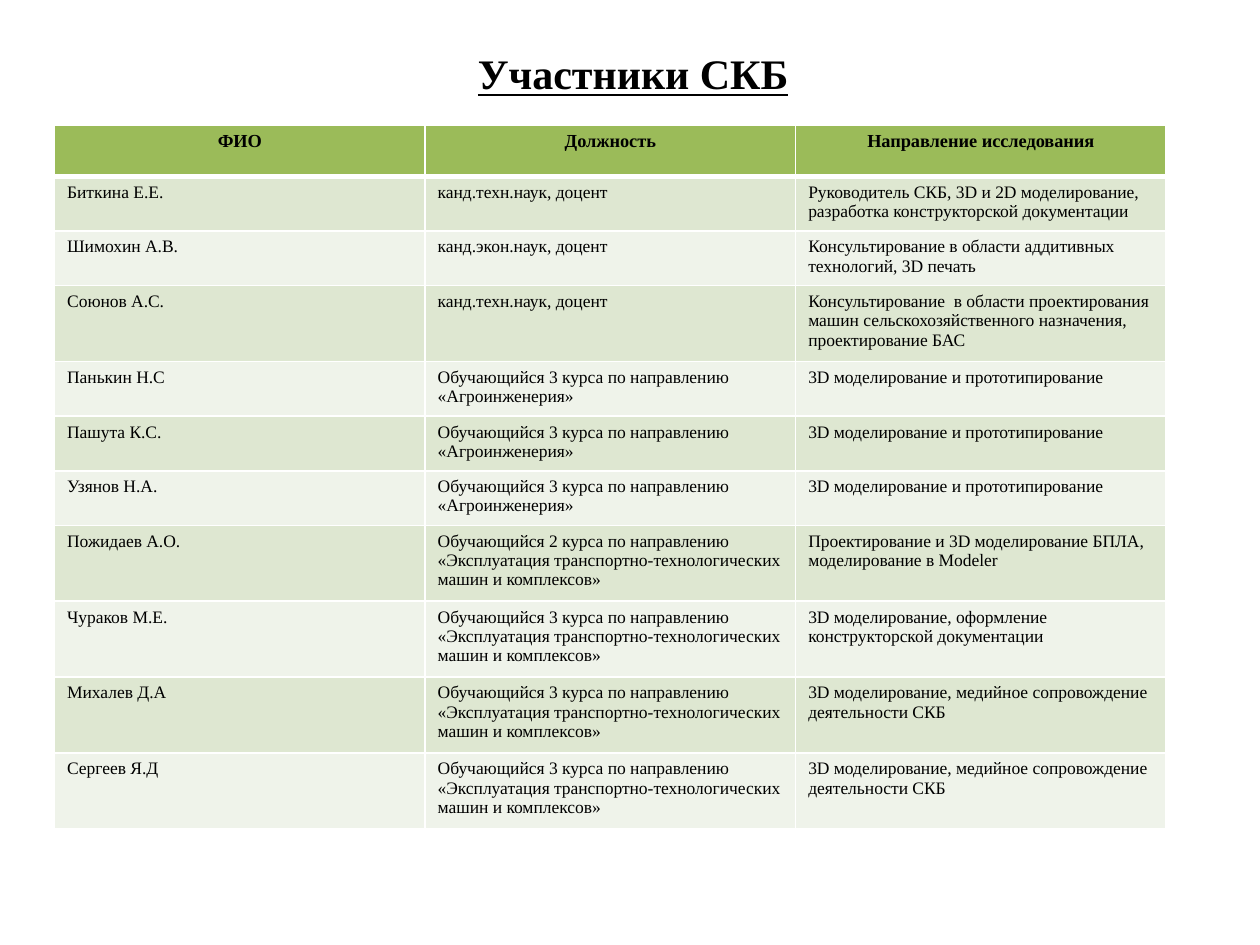
from lxml import etree
from pptx import Presentation
from pptx.dml.color import RGBColor
from pptx.enum.text import MSO_ANCHOR, PP_ALIGN
from pptx.oxml.ns import qn
from pptx.util import Cm, Pt

CENTER, LEFT = PP_ALIGN.CENTER, PP_ALIGN.LEFT
MIDDLE = MSO_ANCHOR.MIDDLE
FONT = "Times New Roman"
HEADER_FILL, BAND_FILLS = "9BBB59", ("DEE7D1", "EFF3EA")
HEADER_HEIGHT, ROW_HEIGHT, TALL_ROW_HEIGHT = 1.04, 1.1, 1.53
COLUMN_WIDTH = 7.47
TWO_LINE_CHARS = 90

HEADER = ("ФИО", "Должность", "Направление исследования")
AGRO = "Обучающийся 3 курса по направлению «Агроинженерия»"
TRANSPORT = ("Обучающийся {} курса по направлению "
             "«Эксплуатация транспортно-технологических машин и комплексов»")
PROTOTYPING = "3D моделирование и прототипирование"
MEDIA = "3D моделирование, медийное сопровождение деятельности СКБ"
MEMBERS = [
    ("Биткина Е.Е.", "канд.техн.наук, доцент",
     "Руководитель СКБ, 3D и 2D моделирование, разработка конструкторской документации"),
    ("Шимохин А.В.", "канд.экон.наук, доцент",
     "Консультирование в области аддитивных технологий, 3D печать"),
    ("Союнов А.С.", "канд.техн.наук, доцент",
     "Консультирование  в области проектирования машин "
     "сельскохозяйственного назначения, проектирование БАС"),
    ("Панькин Н.C", AGRO, PROTOTYPING),
    ("Пашута К.С.", AGRO, PROTOTYPING),
    ("Узянов Н.А.", AGRO, PROTOTYPING),
    ("Пожидаев А.О.", TRANSPORT.format(2),
     "Проектирование и 3D моделирование БПЛА, моделирование в Modeler"),
    ("Чураков М.Е.", TRANSPORT.format(3),
     "3D моделирование, оформление конструкторской документации"),
    ("Михалев Д.А", TRANSPORT.format(3), MEDIA),
    ("Сергеев Я.Д", TRANSPORT.format(3), MEDIA),
]


def rgb(value):
    """Return the colour for a hex string."""
    return RGBColor.from_string(value)


def write(tf, text, size, bold, align):
    """Write one formatted paragraph into a text frame."""
    tf.text = text
    p = tf.paragraphs[0]
    p.alignment = align
    p.font.name, p.font.size, p.font.bold = FONT, Pt(size), bold
    p.font.color.rgb = rgb("000000")
    return p


def set_borders(cell, bottom):
    """Draw white cell borders with the given bottom width in points."""
    tc_pr = cell._tc.get_or_add_tcPr()
    widths = {"a:lnL": 1, "a:lnR": 1, "a:lnT": 1, "a:lnB": bottom}
    for i, (tag, width) in enumerate(widths.items()):
        ln = etree.Element(qn(tag), w=str(Pt(width)))
        fill = etree.SubElement(ln, qn("a:solidFill"))
        etree.SubElement(fill, qn("a:srgbClr"), val="FFFFFF")
        tc_pr.insert(i, ln)


def fill_row(row, texts, height, fill, size=10, bold=False, align=LEFT, bottom=1):
    """Fill and format one table row."""
    row.height = Cm(height)
    for cell, text in zip(row.cells, texts):
        write(cell.text_frame, text, size, bold, align)
        cell.fill.solid()
        cell.fill.fore_color.rgb = rgb(fill)
        set_borders(cell, bottom)


def add_title(s, text):
    """Place and format the slide title."""
    sp = s.shapes.title
    sp.left, sp.top, sp.width, sp.height = Cm(9.35), Cm(0.84), Cm(6.83), Cm(1.27)
    p = write(sp.text_frame, text, 24, True, CENTER)
    p.font.underline = True
    sp.text_frame.word_wrap = False
    sp.text_frame.vertical_anchor = MIDDLE


def add_members(s):
    """Add the table of members."""
    table = s.shapes.add_table(len(MEMBERS) + 1, len(HEADER), Cm(1.1), Cm(2.52),
                               Cm(COLUMN_WIDTH * len(HEADER)), Cm(14.2)).table
    for column in table.columns:
        column.width = Cm(COLUMN_WIDTH)
    fill_row(table.rows[0], HEADER, HEADER_HEIGHT, HEADER_FILL,
             size=10.5, bold=True, align=CENTER, bottom=3)
    for i, member in enumerate(MEMBERS):
        tall = max(map(len, member)) > TWO_LINE_CHARS
        fill_row(table.rows[i + 1], member, TALL_ROW_HEIGHT if tall else ROW_HEIGHT,
                 BAND_FILLS[i % 2])


def main():
    """Build and save the slide."""
    prs = Presentation()
    prs.slide_width, prs.slide_height = Cm(25.4), Cm(19.05)
    s = prs.slides.add_slide(prs.slide_layouts[5])
    add_title(s, "Участники СКБ")
    add_members(s)
    prs.save("out.pptx")


if __name__ == "__main__":
    main()
